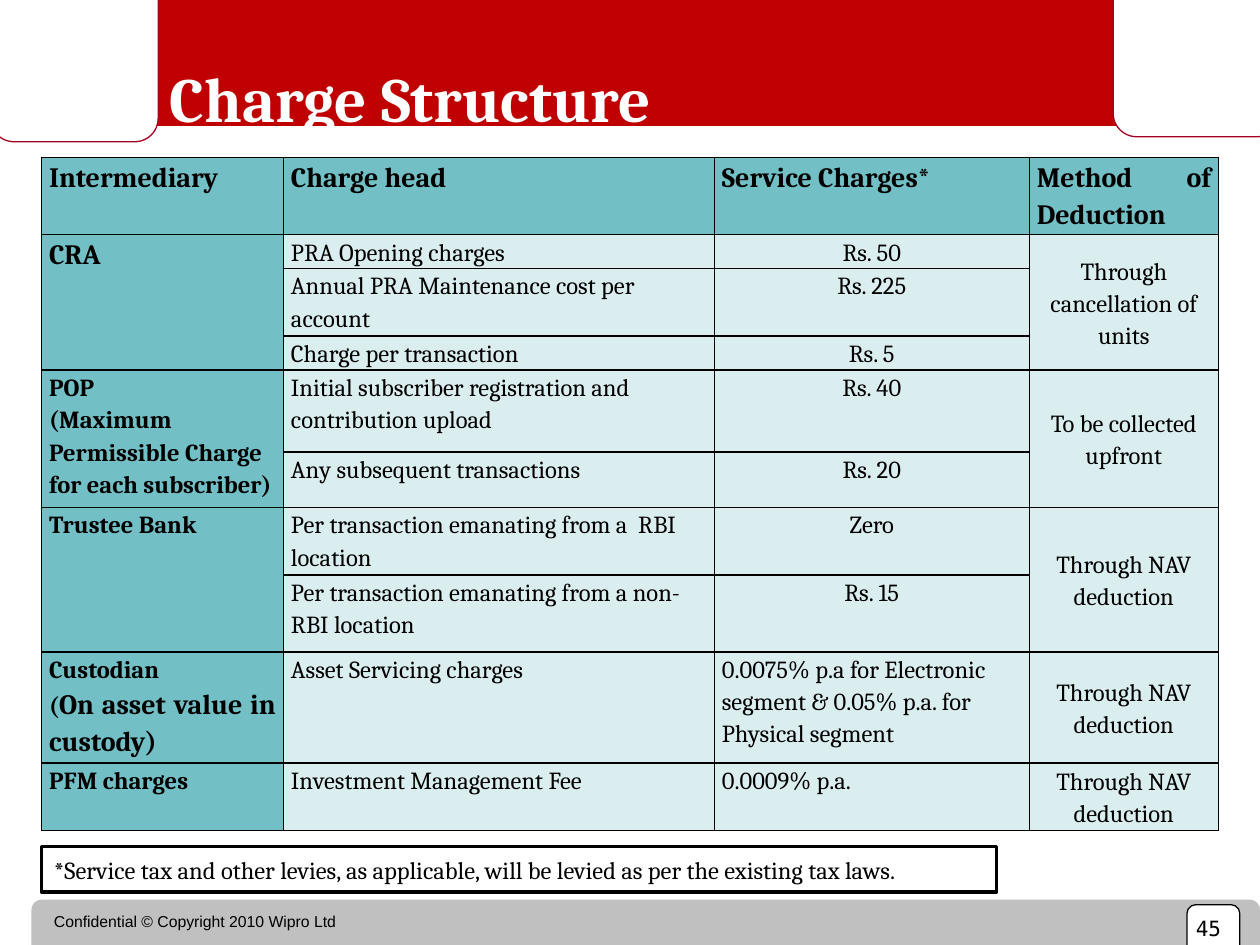
from lxml.etree import SubElement
from pptx import Presentation
from pptx.dml.color import RGBColor
from pptx.enum.shapes import MSO_SHAPE
from pptx.enum.text import MSO_ANCHOR, PP_ALIGN
from pptx.oxml.ns import qn
from pptx.util import Inches, Pt

RED = RGBColor(0xC0, 0x00, 0x00)
DARK_RED = RGBColor(0xA5, 0x00, 0x21)
GREY = RGBColor(0xC0, 0xC0, 0xC0)
WHITE = RGBColor(0xFF, 0xFF, 0xFF)
BLACK = RGBColor(0x00, 0x00, 0x00)
TEAL = RGBColor(0x72, 0xBF, 0xC5)
PALE_TEAL = RGBColor(0xDA, 0xED, 0xEF)

LEFT, CENTER, RIGHT, JUSTIFY = (
    PP_ALIGN.LEFT, PP_ALIGN.CENTER, PP_ALIGN.RIGHT, PP_ALIGN.JUSTIFY)

# Content: each intermediary is (name paragraphs, [(charge head, charge)], method);
# a name paragraph is (alignment, [(text, size)])
TITLE = "Charge Structure"
HEADINGS = ["Intermediary", "Charge head", "Service Charges*", "Method of Deduction"]
INTERMEDIARIES = [
    ([(LEFT, [("CRA", 16)])],
     [("PRA Opening charges", "Rs. 50"),
      ("Annual PRA Maintenance cost per account", "Rs. 225"),
      ("Charge per transaction", "Rs. 5")],
     "Through cancellation of units"),
    ([(JUSTIFY, [("POP", 14)]),
      (LEFT, [("(Maximum Permissible Charge for each subscriber)", 14)])],
     [("Initial subscriber registration and contribution upload", "Rs. 40"),
      ("Any subsequent transactions", "Rs. 20")],
     "To be collected upfront"),
    ([(JUSTIFY, [("Trustee Bank", 14)])],
     [("Per transaction emanating from a  RBI location", "Zero"),
      ("Per transaction emanating from a non-RBI location", "Rs. 15")],
     "Through NAV deduction"),
    ([(JUSTIFY, [("Custodian", 14)]),
      (JUSTIFY, [("(", 14), ("On asset value in custody)", 16)])],
     [("Asset Servicing charges",
       "0.0075% p.a for Electronic segment & 0.05% p.a. for Physical segment")],
     "Through NAV deduction"),
    ([(JUSTIFY, [("PFM charges", 14)])],
     [("Investment Management Fee", "0.0009% p.a.")],
     "Through NAV deduction"),
]
FOOTNOTE = ("*Service tax and other levies, as applicable, "
            "will be levied as per the existing tax laws.")
COPYRIGHT = "Confidential © Copyright 2010 Wipro Ltd"
PAGE_NUMBER = "45"

# Layout in inches
MARGIN = 0.33
TABLE_TOP = 1.25
COLUMN_WIDTHS = [1.92, 3.42, 2.5, 1.5]
ROW_HEIGHTS = [0.44, 0.24, 0.33, 0.24, 0.65, 0.44, 0.47, 0.61, 0.76, 0.47]

# (left, top, width, height), rotation, corner, fill, line
FRAME_SHAPES = [
    ((0.25, -0.21, 9.92, 1.21), 0, 0.139, RED, None),
    ((0.25, 7.14, 9.75, 0.58), 0, 0.139, GREY, None),
    ((9.42, 7.18, 0.42, 0.49), 0, 0.167, WHITE, BLACK),
    ((8.81, -0.27, 1.38, 1.33), 90, 0.139, WHITE, DARK_RED),
    ((-0.1, -0.23, 1.38, 1.33), 90, 0.139, WHITE, DARK_RED),
]


def add_shape(slide, kind, box, fill, line=None, line_width=0.75):
    shape = slide.shapes.add_shape(kind, *map(Inches, box))
    shape.shadow.inherit = False
    shape.fill.solid()
    shape.fill.fore_color.rgb = fill
    if line is None:
        shape.line.fill.background()
    else:
        shape.line.color.rgb = line
        shape.line.width = Pt(line_width)
    return shape


def write(paragraph, runs, alignment=LEFT, spacing=None, color=BLACK, **font):
    """Add (text, size) runs that share one format."""
    paragraph.alignment = alignment
    if spacing:
        paragraph.line_spacing = spacing
    for text, size in runs:
        run = paragraph.add_run()
        run.text = text
        for name, value in {"name": "Cambria", **font, "size": Pt(size)}.items():
            setattr(run.font, name, value)
        run.font.color.rgb = color


def add_text(slide, box, text, size, anchor=MSO_ANCHOR.MIDDLE, **style):
    frame = slide.shapes.add_textbox(*map(Inches, box)).text_frame
    frame.word_wrap = True
    frame.vertical_anchor = anchor
    write(frame.paragraphs[0], [(text, size)], **style)


def fill_cell(cell, paragraphs, fill, bold=False, anchor=MSO_ANCHOR.TOP):
    cell.vertical_anchor = anchor
    for index, (alignment, runs) in enumerate(paragraphs):
        frame = cell.text_frame
        paragraph = frame.add_paragraph() if index else frame.paragraphs[0]
        write(paragraph, runs, alignment, 1.15, bold=bold)
    cell.fill.solid()
    cell.fill.fore_color.rgb = fill


def format_cell(cell):
    cell.margin_left = cell.margin_right = Inches(0.06)
    cell.margin_top = cell.margin_bottom = 0
    properties = cell._tc.get_or_add_tcPr()
    for index, side in enumerate(("a:lnL", "a:lnR", "a:lnT", "a:lnB")):
        border = SubElement(properties, qn(side), w=str(Pt(1)))
        solid = SubElement(border, qn("a:solidFill"))
        SubElement(solid, qn("a:srgbClr"), val=str(BLACK))
        # Borders come before the fill
        properties.insert(index, border)


def add_charge_table(slide):
    table = slide.shapes.add_table(
        len(ROW_HEIGHTS), len(COLUMN_WIDTHS), Inches(MARGIN), Inches(TABLE_TOP),
        Inches(sum(COLUMN_WIDTHS)), Inches(sum(ROW_HEIGHTS))).table
    for column, width in zip(table.columns, COLUMN_WIDTHS):
        column.width = Inches(width)
    for row, height in zip(table.rows, ROW_HEIGHTS):
        row.height = Inches(height)
    for cell in table.iter_cells():
        format_cell(cell)

    for column, heading in enumerate(HEADINGS):
        fill_cell(table.cell(0, column), [(JUSTIFY, [(heading, 16)])], TEAL, bold=True)

    top = 1
    for name, charges, method in INTERMEDIARIES:
        bottom = top + len(charges) - 1
        if bottom > top:
            for column in (0, 3):
                table.cell(top, column).merge(table.cell(bottom, column))
        fill_cell(table.cell(top, 0), name, TEAL, bold=True)
        fill_cell(table.cell(top, 3), [(CENTER, [(method, 14)])], PALE_TEAL,
                  anchor=MSO_ANCHOR.MIDDLE)
        for row, (head, charge) in enumerate(charges, top):
            # Percentages read as sentences, single amounts are centred
            alignment = LEFT if "%" in charge else CENTER
            fill_cell(table.cell(row, 1), [(LEFT, [(head, 14)])], PALE_TEAL)
            fill_cell(table.cell(row, 2), [(alignment, [(charge, 14)])], PALE_TEAL)
        top = bottom + 1


def main():
    presentation = Presentation()
    presentation.slide_width, presentation.slide_height = Inches(10), Inches(7.5)
    slide = presentation.slides.add_slide(presentation.slide_layouts[6])

    # Title band, footer band, page tab and corner tabs
    for box, rotation, corner, fill, line in FRAME_SHAPES:
        shape = add_shape(slide, MSO_SHAPE.ROUNDED_RECTANGLE, box, fill, line)
        shape.adjustments[0] = corner
        shape.rotation = rotation

    # Title and footer text
    add_text(slide, (1.25, 0.38, 5.92, 0.78), TITLE, 36, color=WHITE, bold=True)
    add_text(slide, (MARGIN, 7.25, 4.06, 0.16), COPYRIGHT, 9, spacing=0.75, name="Arial")
    add_text(slide, (9.33, 7.22, 0.46, 0.23), PAGE_NUMBER, 12, anchor=MSO_ANCHOR.TOP,
             alignment=RIGHT, name="DejaVu Sans Mono")

    add_charge_table(slide)

    # Footnote
    note = add_shape(slide, MSO_SHAPE.RECTANGLE, (MARGIN, 6.72, 7.58, 0.36),
                     WHITE, BLACK, 2)
    note.text_frame.word_wrap = True
    note.text_frame.vertical_anchor = MSO_ANCHOR.MIDDLE
    write(note.text_frame.paragraphs[0], [(FOOTNOTE, 14)])

    presentation.save("out.pptx")


if __name__ == "__main__":
    main()
